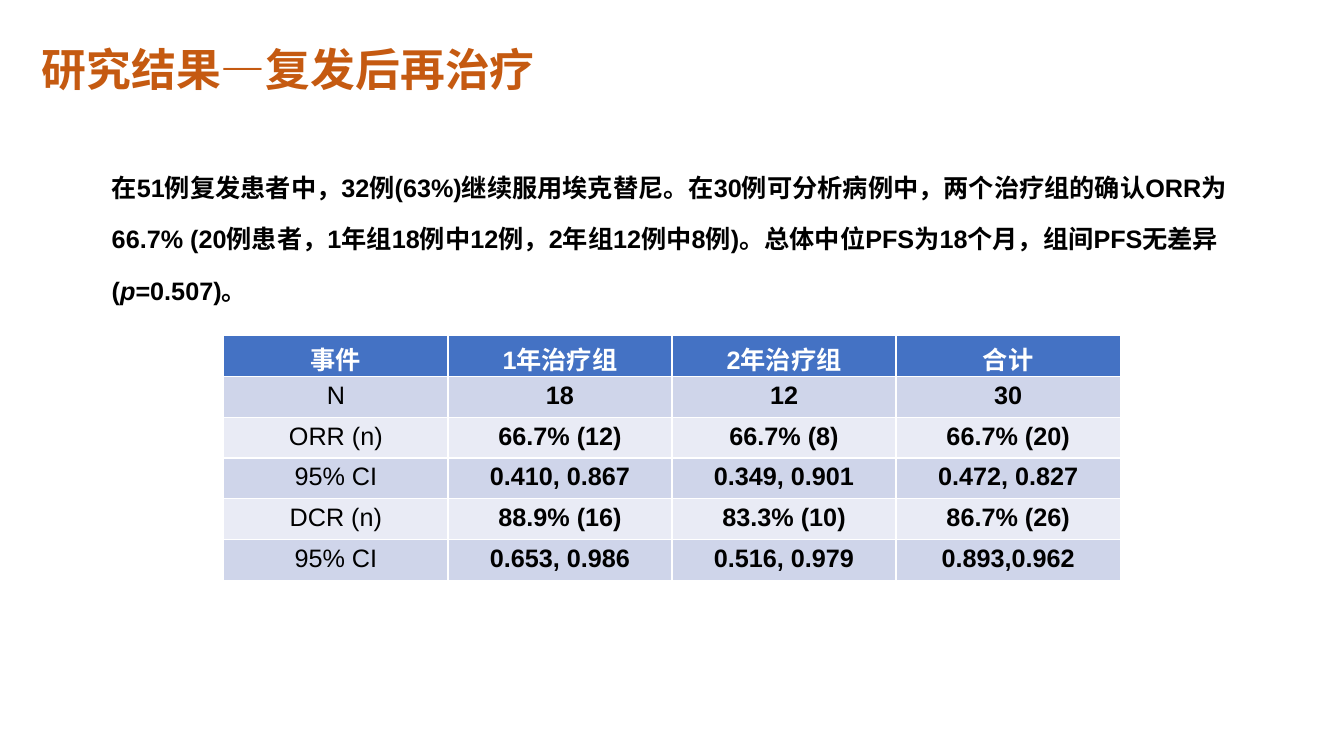
from pptx import Presentation
from pptx.dml.color import RGBColor
from pptx.enum.text import MSO_ANCHOR, PP_ALIGN
from pptx.util import Inches, Pt

HUES = {
    "title": "C55A11",
    "text": "000000",
    "head": "4472C4",
    "label": "FFFFFF",
    "odd": "CFD5EA",
    "even": "E9EBF5",
}

TITLE = "研究结果—复发后再治疗"
BODY = [
    ("在51例复发患者中，32例(63%)继续服用埃克替尼。在30例可分析病例中，"
     "两个治疗组的确认ORR为66.7% (20例患者，1年组18例中12例，"
     "2年组12例中8例)。总体中位PFS为18个月，组间PFS无差异(", False),
    ("p", True),
    ("=0.507)。", False),
]
ROWS = [
    ["事件", "1年治疗组", "2年治疗组", "合计"],
    ["N", "18", "12", "30"],
    ["ORR (n)", "66.7% (12)", "66.7% (8)", "66.7% (20)"],
    ["95% CI", "0.410, 0.867", "0.349, 0.901", "0.472, 0.827"],
    ["DCR (n)", "88.9% (16)", "83.3% (10)", "86.7% (26)"],
    ["95% CI", "0.653, 0.986", "0.516, 0.979", "0.893,0.962"],
]


def color(name):
    return RGBColor.from_string(HUES[name])


def style(para, size, hue, bold=True, face="Arial"):
    font = para.font
    font.name = face
    font.size = Pt(size)
    font.bold = bold
    font.color.rgb = color(hue)


def add_text(slide, box, anchor):
    frame = slide.shapes.add_textbox(*map(Inches, box)).text_frame
    frame.word_wrap = True
    frame.vertical_anchor = anchor
    return frame.paragraphs[0]


def add_title(slide, box):
    para = add_text(slide, box, MSO_ANCHOR.MIDDLE)
    para.text = TITLE
    para.alignment = PP_ALIGN.CENTER
    para.line_spacing = 0.9
    style(para, 32, "title", face="Noto Sans CJK SC")


def add_body(slide, box):
    para = add_text(slide, box, MSO_ANCHOR.TOP)
    para.line_spacing = 1.7
    style(para, 18, "text")
    for text, slant in BODY:
        run = para.add_run()
        run.text = text
        if slant:
            run.font.italic = True


def add_grid(slide, box):
    table = slide.shapes.add_table(
        len(ROWS), len(ROWS[0]), *map(Inches, box)).table
    for r, row in enumerate(ROWS):
        fill = "head" if r == 0 else "odd" if r % 2 else "even"
        for c, text in enumerate(row):
            cell = table.cell(r, c)
            cell.fill.solid()
            cell.fill.fore_color.rgb = color(fill)
            para = cell.text_frame.paragraphs[0]
            para.text = text
            para.alignment = PP_ALIGN.CENTER
            style(para, 18, "text" if r else "label", r == 0 or c > 0)


def main():
    deck = Presentation()
    deck.slide_width = Inches(13.33)
    deck.slide_height = Inches(7.5)
    slide = deck.slides.add_slide(deck.slide_layouts[6])
    add_body(slide, (1.01, 1.45, 11.31, 1.54))
    add_grid(slide, (2.22, 3.33, 8.89, 2.43))
    add_title(slide, (-0.13, 0.31, 5.98, 0.81))
    deck.save("out.pptx")


if __name__ == "__main__":
    main()
